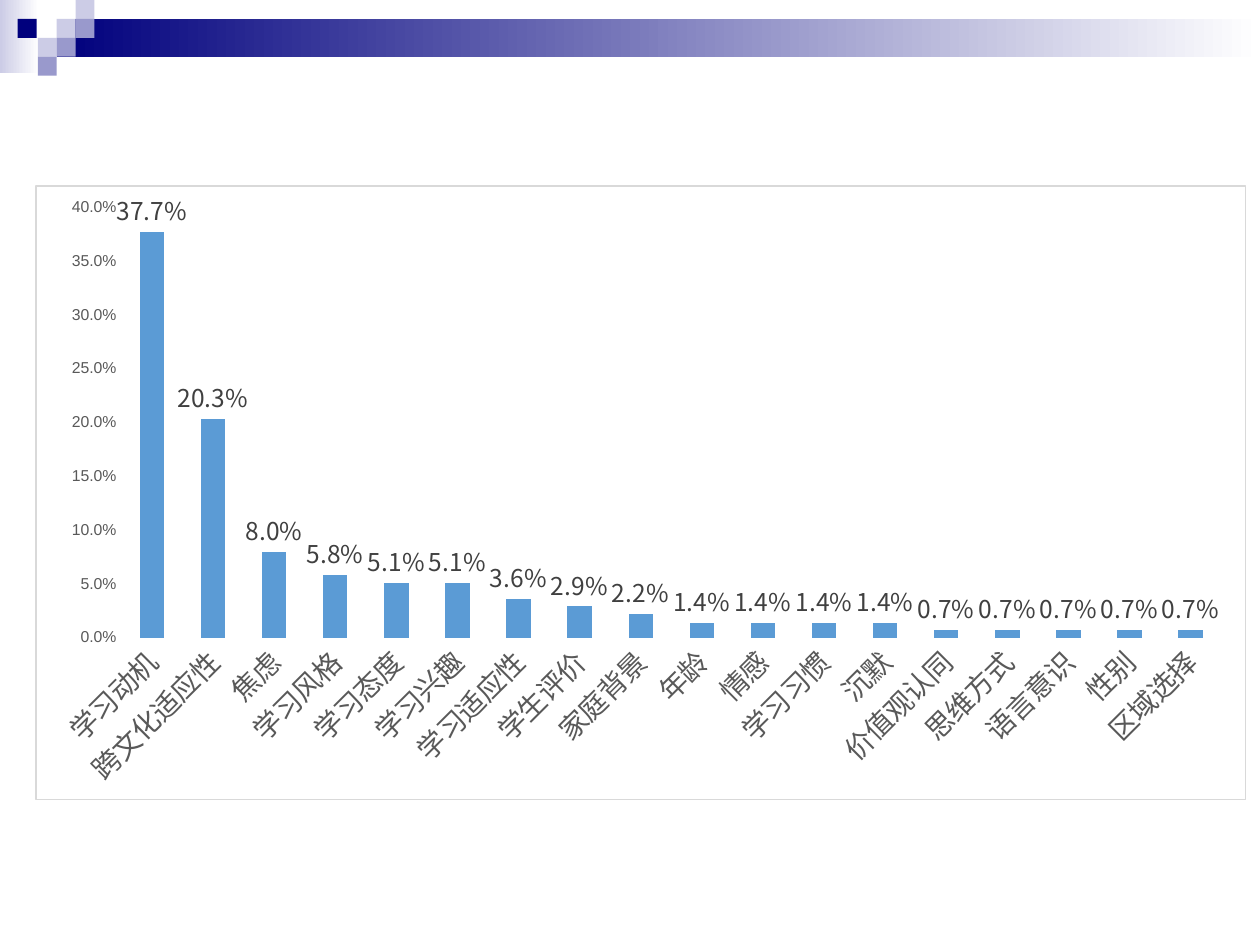
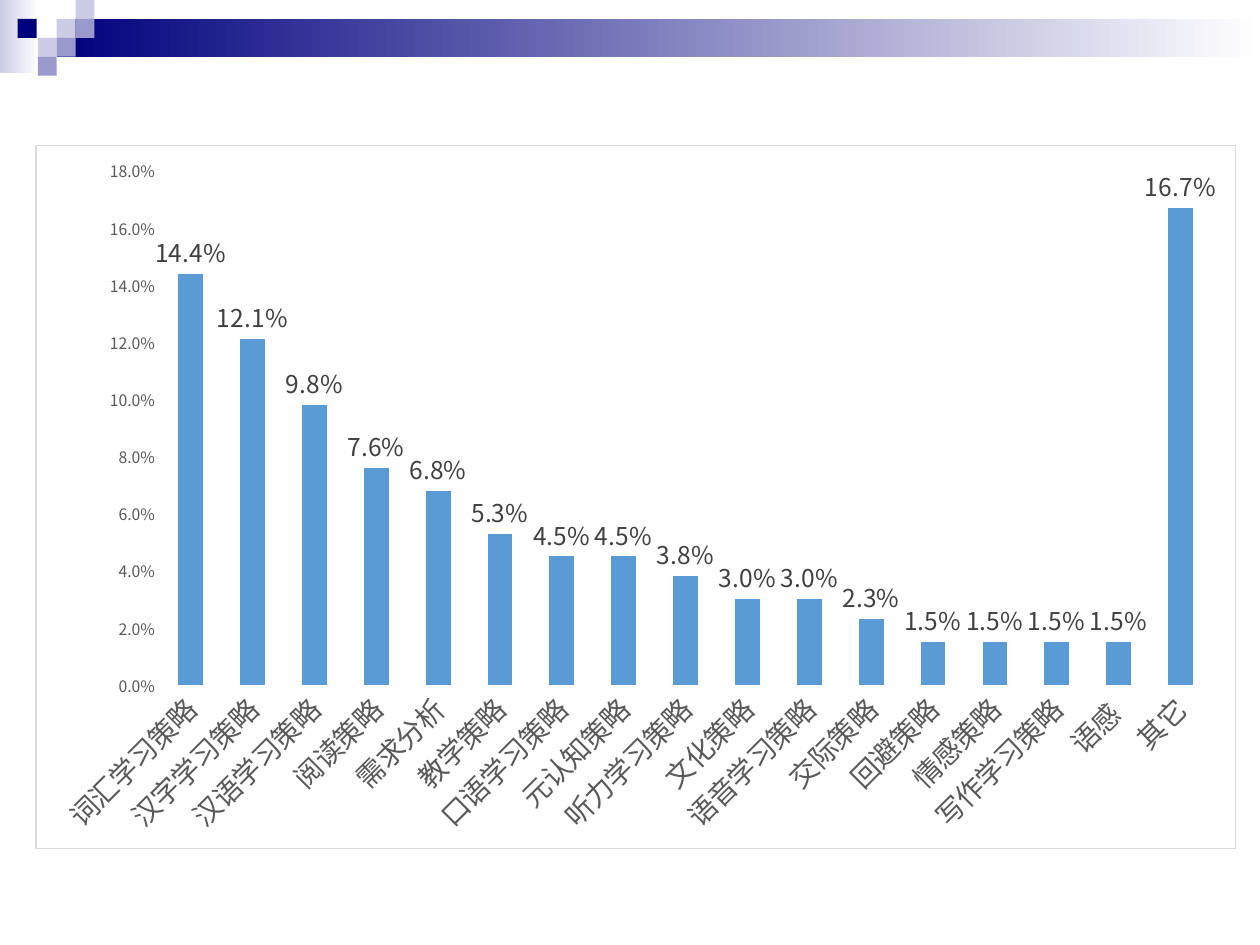
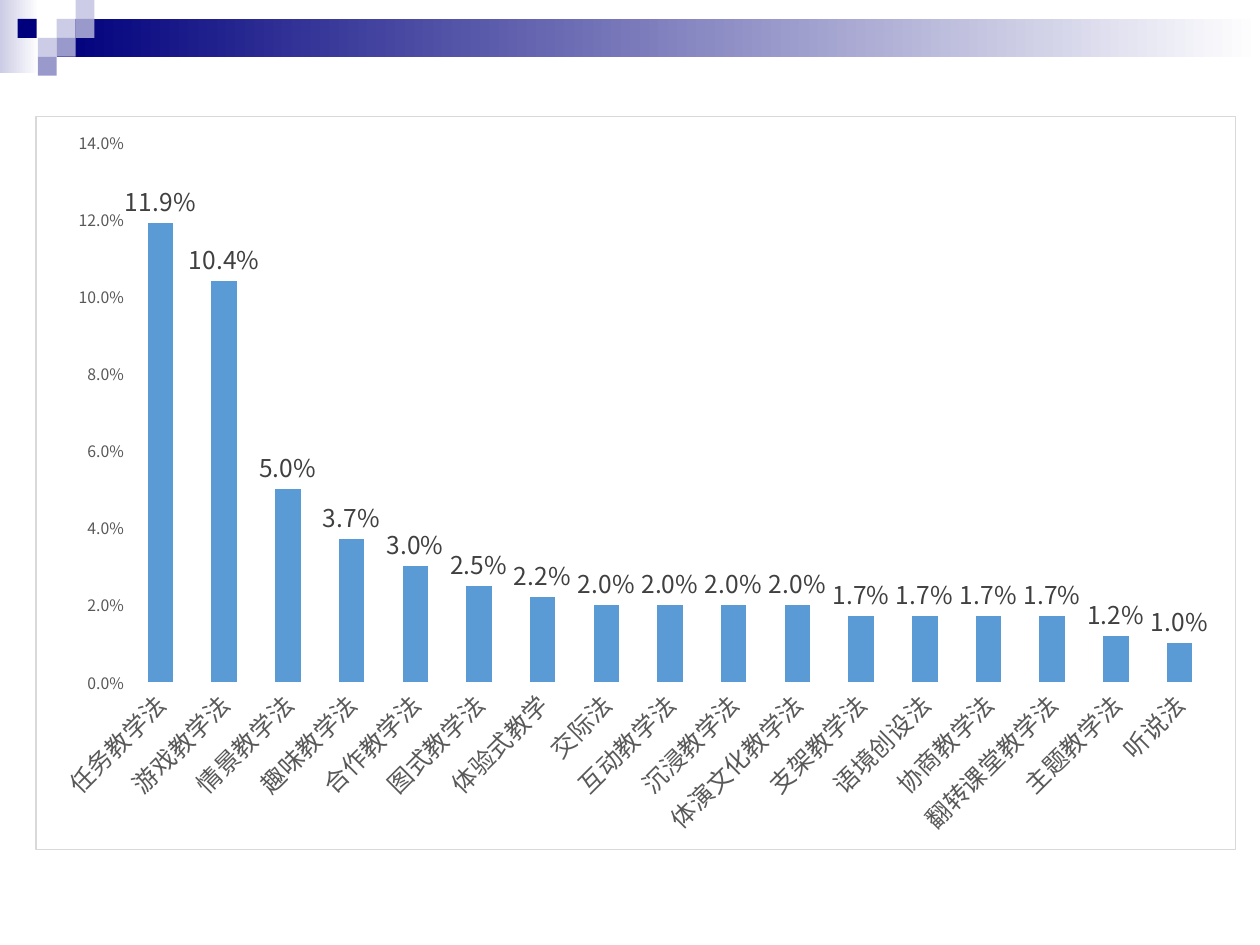
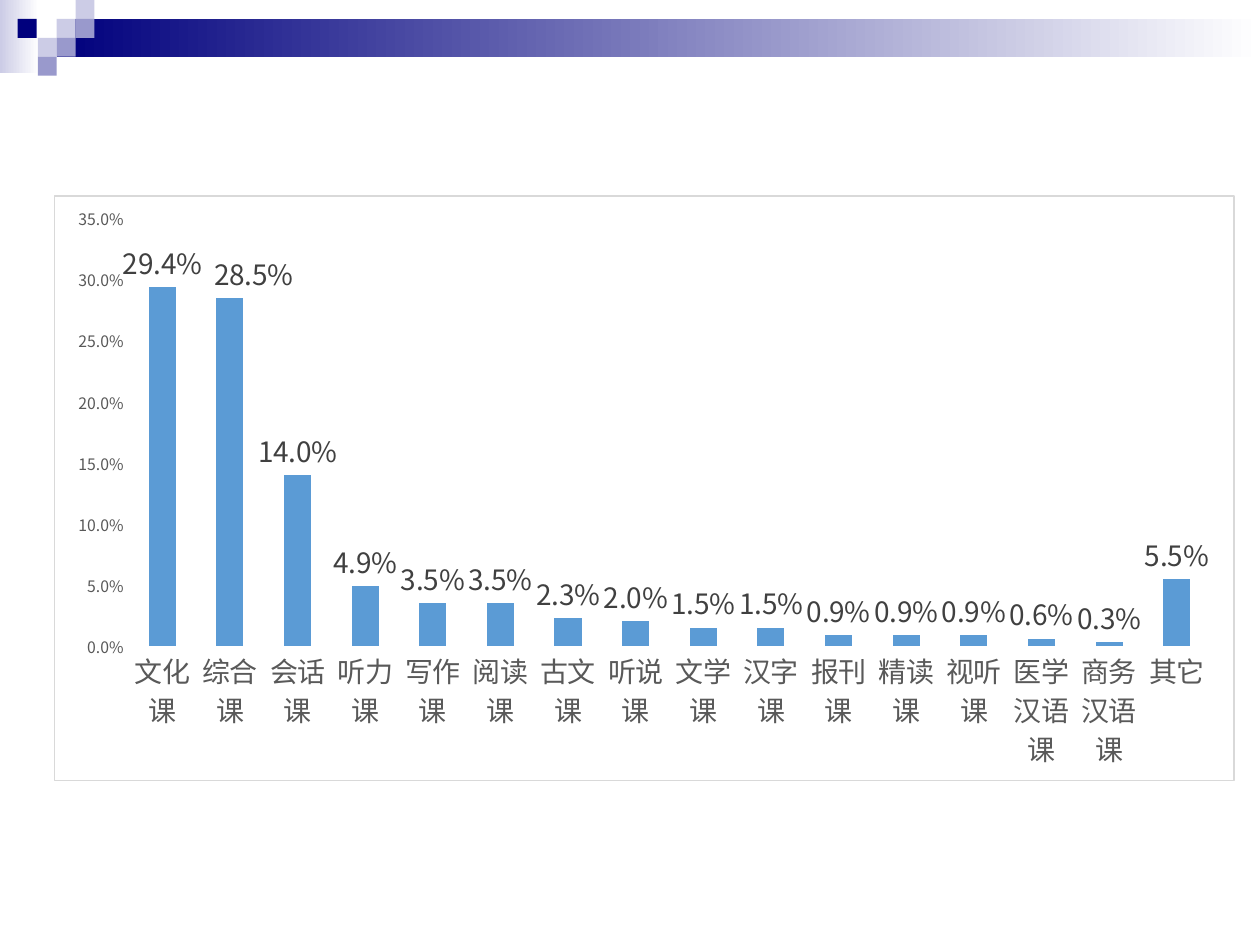
from lxml.etree import SubElement
from pptx import Presentation
from pptx.chart.data import CategoryChartData as ChartData
from pptx.dml.color import RGBColor
from pptx.enum.chart import XL_CHART_TYPE as ChartType
from pptx.enum.chart import XL_LABEL_POSITION as LabelPos
from pptx.enum.chart import XL_TICK_MARK as TickMark
from pptx.enum.shapes import MSO_SHAPE as Shape
from pptx.oxml import parse_xml
from pptx.oxml.ns import nsdecls, qn
from pptx.util import Emu, Pt

# Shared style
PX = 9144  # 100 px to the inch
NAVY = RGBColor(0x00, 0x00, 0x7D)
LILAC = RGBColor(0xCC, 0xCC, 0xE6)
VIOLET = RGBColor(0x99, 0x99, 0xCC)
WHITE = RGBColor(0xFF, 0xFF, 0xFF)
BLACK = RGBColor(0x00, 0x00, 0x00)
BAR_BLUE = RGBColor(0x5B, 0x9B, 0xD5)
AXIS_GRAY = RGBColor(0x59, 0x59, 0x59)
LABEL_GRAY = RGBColor(0x40, 0x40, 0x40)
BORDER_GRAY = RGBColor(0xD9, 0xD9, 0xD9)
ARIAL, NOTO = "Arial", "Noto Sans CJK SC"
PERCENT = "0.0%"

CELL = 15
# Mosaic squares: left, row, colour
MOSAIC = [(45, 1, LILAC), (60, 0, LILAC), (60, 1, VIOLET), (30, 2, LILAC),
          (14, 1, NAVY), (45, 2, VIOLET), (30, 3, VIOLET)]

# Data: shares in percent
FACTORS = {
    "学习动机": 37.7, "跨文化适应性": 20.3, "焦虑": 8.0, "学习风格": 5.8,
    "学习态度": 5.1, "学习兴趣": 5.1, "学习适应性": 3.6, "学生评价": 2.9,
    "家庭背景": 2.2, "年龄": 1.4, "情感": 1.4, "学习习惯": 1.4, "沉默": 1.4,
    "价值观认同": 0.7, "思维方式": 0.7, "语言意识": 0.7, "性别": 0.7,
    "区域选择": 0.7,
}
STRATEGIES = {
    "词汇学习策略": 14.4, "汉字学习策略": 12.1, "汉语学习策略": 9.8,
    "阅读策略": 7.6, "需求分析": 6.8, "教学策略": 5.3, "口语学习策略": 4.5,
    "元认知策略": 4.5, "听力学习策略": 3.8, "文化策略": 3.0,
    "语音学习策略": 3.0, "交际策略": 2.3, "回避策略": 1.5, "情感策略": 1.5,
    "写作学习策略": 1.5, "语感 ": 1.5, "其它": 16.7,
}
METHODS = {
    "任务教学法": 11.9, "游戏教学法": 10.4, "情景教学法": 5.0,
    "趣味教学法": 3.7, "合作教学法": 3.0, "图式教学法": 2.5,
    "体验式教学": 2.2, "交际法": 2.0, "互动教学法": 2.0, "沉浸教学法": 2.0,
    "体演文化教学法": 2.0, "支架教学法": 1.7, "语境创设法": 1.7,
    "协商教学法": 1.7, "翻转课堂教学法": 1.7, "主题教学法": 1.2,
    "听说法": 1.0,
}
COURSES = {
    "文化课": 29.4, "综合课": 28.5, "会话课": 14.0, "听力课": 4.9,
    "写作课": 3.5, "阅读课": 3.5, "古文课": 2.3, "听说课": 2.0,
    "文学课": 1.5, "汉字课": 1.5, "报刊课": 0.9, "精读课": 0.9,
    "视听课": 0.9, "医学汉语课": 0.6, "商务汉语课": 0.3, "其它": 5.5,
}


def format_text(text, size=10, color=AXIS_GRAY, face=NOTO):
    """Format any text object that has a font."""
    font = text.font
    font.size, font.name, font.bold = Pt(size), face, False
    font.color.rgb = color


class Deck:
    def __init__(self):
        self.prs = Presentation()
        self.prs.slide_width, self.prs.slide_height = Emu(1000 * PX), Emu(750 * PX)
        self.s = None

    def new_slide(self):
        self.s = self.prs.slides.add_slide(self.prs.slide_layouts[6])
        self.rect(0, 0, 31, 58, LILAC, WHITE)
        self.rect(45, CELL, 955, 2 * CELL, NAVY, WHITE)
        for x, row, color in MOSAIC:
            self.rect(x, row * CELL, CELL, CELL, color)

    def rect(self, x, y, w, h, color, fade_to=None):
        sp = self.s.shapes.add_shape(Shape.RECTANGLE, *(Emu(v * PX) for v in (x, y, w, h)))
        sp.shadow.inherit = False
        sp.line.fill.background()
        if fade_to is None:
            sp.fill.solid()
            sp.fill.fore_color.rgb = color
        else:
            sp.fill.gradient()
            sp.fill.gradient_angle = 0
            for stop, rgb in zip(sp.fill.gradient_stops, (color, fade_to)):
                stop.color.rgb = rgb

    def column_chart(self, x, y, w, h, shares, top, step, cat_size=16,
                     label_size=14, axis_face=NOTO, slant=-45):
        data = ChartData(number_format=PERCENT)
        data.categories = list(shares)
        data.add_series("Series 1", [round(v / 100, 3) for v in shares.values()])
        chart = self.s.shapes.add_chart(
            ChartType.COLUMN_CLUSTERED, *(Emu(v * PX) for v in (x, y, w, h)), data).chart
        chart.has_legend = chart.has_title = False
        format_text(chart, 10, BLACK, ARIAL)

        # Axes
        cat, val = chart.category_axis, chart.value_axis
        for axis in (cat, val):
            axis.has_major_gridlines = False
            axis.major_tick_mark = axis.minor_tick_mark = TickMark.NONE
            axis.format.line.fill.background()
        format_text(cat.tick_labels, cat_size)
        format_text(val.tick_labels, 9, face=axis_face)
        val.minimum_scale, val.maximum_scale, val.major_unit = 0, top, step
        val.tick_labels.number_format = PERCENT
        val.tick_labels.number_format_is_linked = False
        for body in chart.element.xpath(".//c:catAx/c:txPr/a:bodyPr"):
            body.set("rot", str(slant * 60000))

        # Columns and their labels
        plot = chart.plots[0]
        plot.gap_width, plot.vary_by_categories = 150, False
        series = plot.series[0]
        series.format.fill.solid()
        series.format.fill.fore_color.rgb = BAR_BLUE
        labels = series.data_labels
        labels.show_value, labels.position = True, LabelPos.OUTSIDE_END
        labels.number_format, labels.number_format_is_linked = PERCENT, False
        format_text(labels, label_size, LABEL_GRAY)

        # Frame and East Asian typeface
        chart.element.find(qn("c:chart")).addnext(parse_xml(
            f'<c:spPr {nsdecls("c", "a")}>'
            f'<a:solidFill><a:srgbClr val="{WHITE}"/></a:solidFill>'
            f'<a:ln w="{Pt(0.75)}"><a:solidFill><a:srgbClr val="{BORDER_GRAY}"/>'
            '</a:solidFill></a:ln></c:spPr>'))
        for latin in chart.element.xpath(".//a:latin"):
            latin.addnext(parse_xml(f'<a:ea {nsdecls("a")} typeface="{NOTO}"/>'))
        return chart

    def shift_label(self, chart, index, dx, dy, size):
        """Move one data label by a fraction of the chart's size."""
        label = chart.plots[0].series[0].points[index].data_label
        format_text(label, size, LABEL_GRAY)
        label.position = LabelPos.OUTSIDE_END
        idx = chart.element.xpath(f'.//c:dLbl/c:idx[@val="{index}"]')[0]
        layout = parse_xml(f'<c:layout {nsdecls("c")}/>')
        manual = SubElement(layout, qn("c:manualLayout"))
        for tag, value in (("c:x", dx), ("c:y", dy)):
            SubElement(manual, qn(tag)).set("val", str(value))
        idx.addnext(layout)


def main():
    deck = Deck()

    # Learner factors
    deck.new_slide()
    deck.column_chart(28, 147, 961, 488, FACTORS, 0.4, 0.05, axis_face=ARIAL)

    # Learning strategies
    deck.new_slide()
    deck.column_chart(28, 115, 953, 559, STRATEGIES, 0.18, 0.02)

    # Teaching methods
    deck.new_slide()
    deck.column_chart(28, 92, 953, 583, METHODS, 0.14, 0.02, cat_size=14)

    # Course types
    deck.new_slide()
    chart = deck.column_chart(43, 155, 937, 465, COURSES, 0.35, 0.05,
                              label_size=16, slant=0)
    deck.shift_label(chart, 1, 0.02, 0, 16)

    deck.prs.save("out.pptx")


if __name__ == "__main__":
    main()
